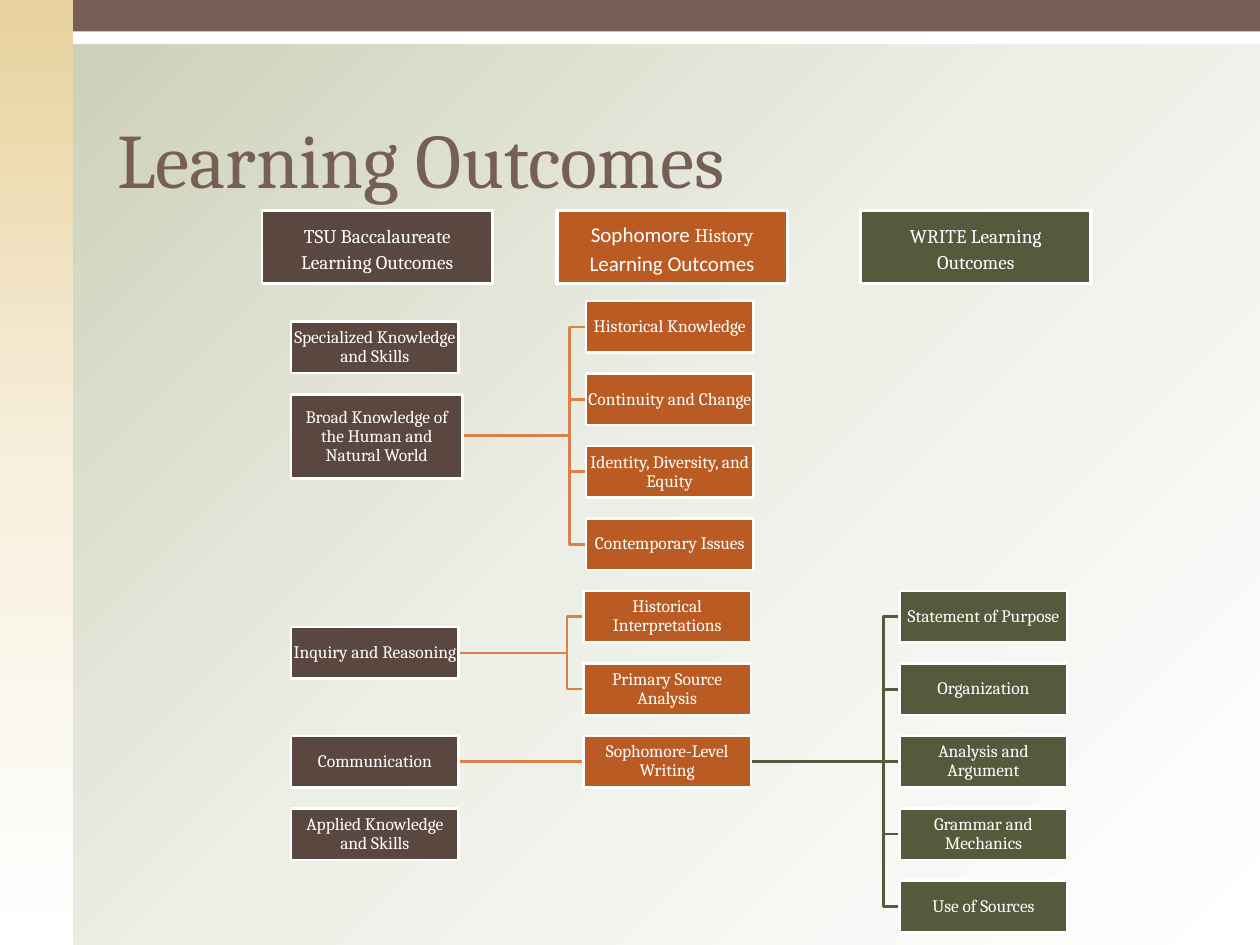
from lxml import etree
from pptx import Presentation
from pptx import util as u
from pptx.dml.color import RGBColor
from pptx.enum import shapes, text
from pptx.oxml.ns import qn

BROWN, ORANGE, GREEN = "594740", "B95B22", "565A3C"
LINK_ORANGE, TITLE_BROWN, WHITE = "DD8047", "775F55", "FFFFFF"
BOX_WIDTH, BOX_HEIGHT = 1.33, 0.41
FIRST_ROW, ROW_PITCH = 2.39, 0.575
LEFT, MIDDLE_UPPER, MIDDLE_LOWER, RIGHT = 2.31, 4.65, 4.63, 7.14


def color(hex_string):
    return RGBColor.from_string(hex_string)


def row_top(row):
    return FIRST_ROW + ROW_PITCH * row


def row_center(row):
    return row_top(row) + BOX_HEIGHT / 2


def apply_gradient(fill, element, hex_colors, angle):
    """Fill with evenly spaced colours; angle is counter-clockwise."""
    fill.gradient()
    fill.gradient_angle = angle
    stop_list = next(element.iter(qn("a:gsLst")))
    for stop in list(stop_list):
        stop_list.remove(stop)
    for index, hex_color in enumerate(hex_colors):
        position = index * 100000 // (len(hex_colors) - 1)
        stop = etree.SubElement(stop_list, qn("a:gs"), pos=str(position))
        etree.SubElement(stop, qn("a:srgbClr"), val=hex_color)


class OutcomeSlide:
    font = "Cambria"
    line_width = 1.5

    def __init__(self, presentation):
        self.slide = presentation.slides.add_slide(presentation.slide_layouts[5])

    def background(self, hex_colors):
        apply_gradient(self.slide.background.fill, self.slide.element, hex_colors, 315)

    def format_run(self, run, size, hex_color=WHITE, font=None):
        run.font.name = font or self.font
        run.font.size = u.Pt(size)
        run.font.color.rgb = color(hex_color)

    def title(self, words, left, top, width, height):
        title = self.slide.shapes.title
        title.left, title.top = u.Inches(left), u.Inches(top)
        title.width, title.height = u.Inches(width), u.Inches(height)
        frame = title.text_frame
        frame.text = words
        frame.vertical_anchor = text.MSO_ANCHOR.BOTTOM
        frame.paragraphs[0].alignment = text.PP_ALIGN.LEFT
        self.format_run(frame.paragraphs[0].runs[0], 44, TITLE_BROWN)

    def band(self, left, top, width, height, hex_color=None):
        shape = self.slide.shapes.add_shape(
            shapes.MSO_SHAPE.RECTANGLE,
            *(u.Inches(length) for length in (left, top, width, height)))
        shape.shadow.inherit = False
        shape.line.fill.background()
        if hex_color:
            shape.fill.solid()
            shape.fill.fore_color.rgb = color(hex_color)
        return shape

    def gradient_band(self, left, top, width, height, hex_colors):
        shape = self.band(left, top, width, height)
        apply_gradient(shape.fill, shape.element, hex_colors, 270)

    def label(self, left, top, width, height, hex_color, runs, spacing, outline):
        """Filled box with centred text; runs are (words, size, font)."""
        shape = self.band(left, top, width, height, hex_color)
        shape.line.color.rgb = color(WHITE)
        shape.line.width = u.Pt(outline)
        frame = shape.text_frame
        frame.word_wrap = True
        frame.vertical_anchor = text.MSO_ANCHOR.MIDDLE
        paragraph = frame.paragraphs[0]
        paragraph.alignment = text.PP_ALIGN.CENTER
        paragraph.line_spacing = spacing
        for words, size, font in runs:
            run = paragraph.add_run()
            run.text = words
            self.format_run(run, size, font=font)
        return shape

    def header(self, left, hex_color, runs, outline):
        shape = self.label(left, 1.67, 1.83, 0.58, hex_color, runs, 1.15, outline)
        shape.text_frame.paragraphs[0].space_after = u.Pt(10)

    def outcome(self, left, top, hex_color, words, width=BOX_WIDTH, height=BOX_HEIGHT):
        shape = self.label(left, top, width, height, hex_color,
                           [(words, 10, self.font)], 0.9, self.line_width)
        frame = shape.text_frame
        frame.margin_left = frame.margin_right = u.Inches(0.01)
        frame.margin_top = frame.margin_bottom = u.Inches(0.01)

    def link(self, start_x, start_y, end_x, end_y, hex_color):
        """Straight line on one level, otherwise an elbow turning near its end."""
        start = u.Inches(start_x), u.Inches(start_y)
        end = u.Inches(end_x), u.Inches(end_y)
        if start[1] == end[1]:
            line = self.slide.shapes.add_connector(
                shapes.MSO_CONNECTOR.STRAIGHT, *start, *end)
            properties = line.element.find(qn("p:spPr"))
        else:
            turn = u.Inches(end_x - 0.13)
            builder = self.slide.shapes.build_freeform(*start)
            builder.add_line_segments(
                [(turn, start[1]), (turn, end[1]), end], close=False)
            line = builder.convert_to_shape()
            line.fill.background()
            properties = None
        line.line.color.rgb = color(hex_color)
        line.line.width = u.Pt(self.line_width)
        if properties is None:
            line.shadow.inherit = False
        else:
            etree.SubElement(properties, qn("a:effectLst"))


def main():
    presentation = Presentation()
    presentation.slide_width, presentation.slide_height = u.Inches(10), u.Inches(7.5)
    page = OutcomeSlide(presentation)
    page.background(["C9CDB3", "EDEEE6", WHITE])
    page.band(0, 0, 10, 0.35, WHITE)
    page.gradient_band(0, 0, 0.58, 7.5, ["E8D19D", "F7F0DE", WHITE])
    page.band(0.58, 0, 9.42, 0.25, TITLE_BROWN)
    page.title("Learning Outcomes", 0.83, 0.42, 8.75, 1.25)

    # Start x, start row, end x, end rows, colour
    links = [
        (5.96, 6, RIGHT, range(4, 9), GREEN),
        (3.65, 6, MIDDLE_LOWER, [6], LINK_ORANGE),
        (3.65, 4.5, MIDDLE_LOWER, [4, 5], LINK_ORANGE),
        (3.67, 1.5, MIDDLE_UPPER, range(4), LINK_ORANGE),
    ]
    for start_x, start_row, end_x, end_rows, hex_color in links:
        for end_row in end_rows:
            page.link(start_x, row_center(start_row), end_x, row_center(end_row), hex_color)

    page.outcome(LEFT, 2.55, BROWN, "Specialized Knowledge and Skills")
    page.outcome(LEFT, 3.13, BROWN, "Broad Knowledge of the Human and Natural World",
                 1.36, 0.67)
    for row, words in [(4.5, "Inquiry and Reasoning"), (6, "Communication"),
                       (7, "Applied Knowledge and Skills")]:
        page.outcome(LEFT, row_top(row), BROWN, words)

    # Left edge, first row, colour, outcomes on consecutive rows
    columns = [
        (MIDDLE_UPPER, 0, ORANGE, ["Historical Knowledge", "Continuity and Change",
                                   "Identity, Diversity, and Equity",
                                   "Contemporary Issues"]),
        (MIDDLE_LOWER, 4, ORANGE, ["Historical Interpretations",
                                   "Primary Source Analysis",
                                   "Sophomore-Level Writing"]),
        (RIGHT, 4, GREEN, ["Statement of Purpose", "Organization",
                           "Analysis and Argument", "Grammar and Mechanics",
                           "Use of Sources"]),
    ]
    for left, first_row, hex_color, outcomes in columns:
        for row, words in enumerate(outcomes, first_row):
            page.outcome(left, row_top(row), hex_color, words)

    page.header(2.08, BROWN, [("TSU Baccalaureate Learning Outcomes", 11, "Cambria")], 1.5)
    page.header(4.42, ORANGE, [("Sophomore ", 12, "Calibri"), ("History", 11, "Cambria"),
                               (" Learning Outcomes", 12, "Calibri")], 2)
    page.header(6.83, GREEN, [("WRITE Learning Outcomes", 11, "Cambria")], 2)
    presentation.save("out.pptx")


if __name__ == "__main__":
    main()
